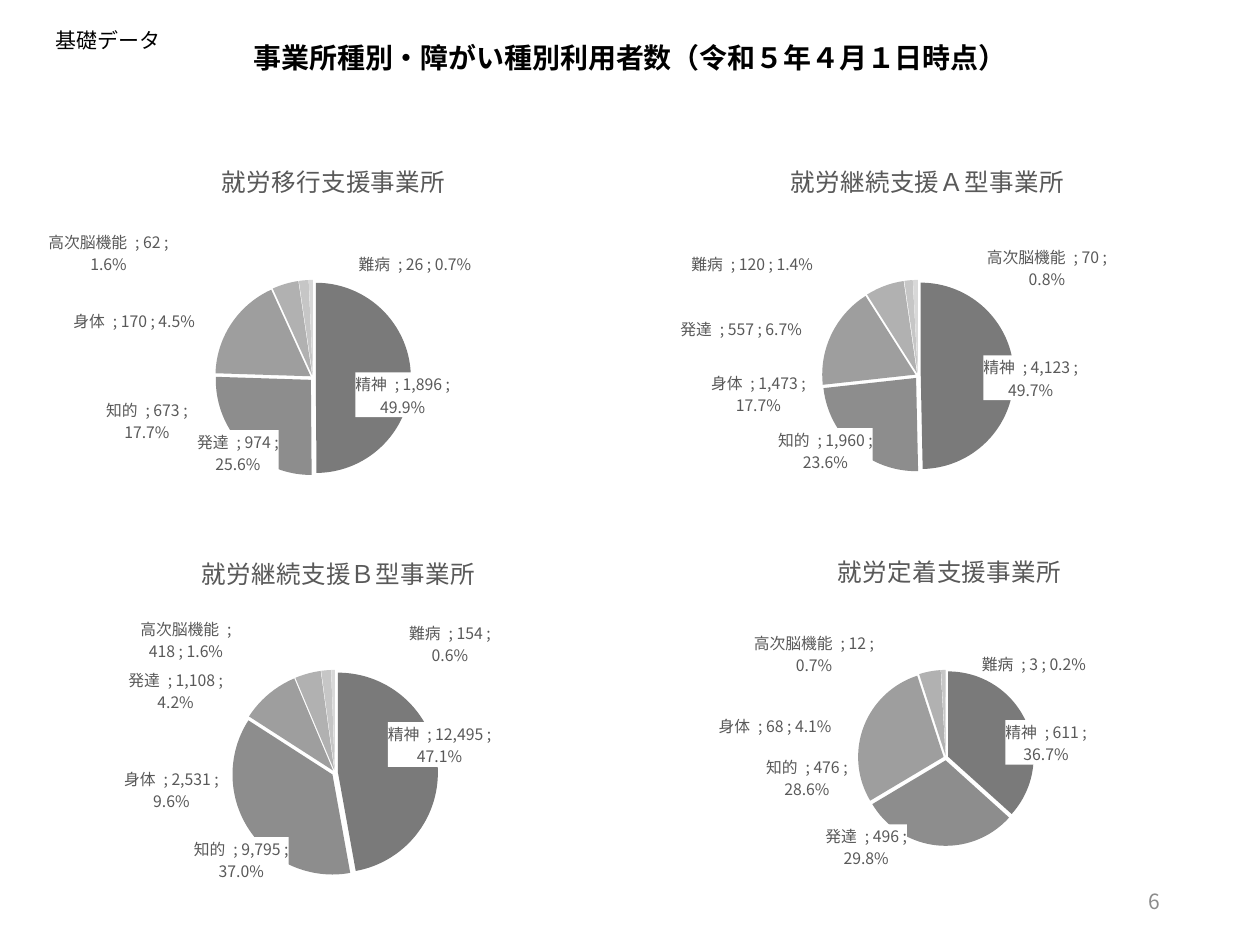
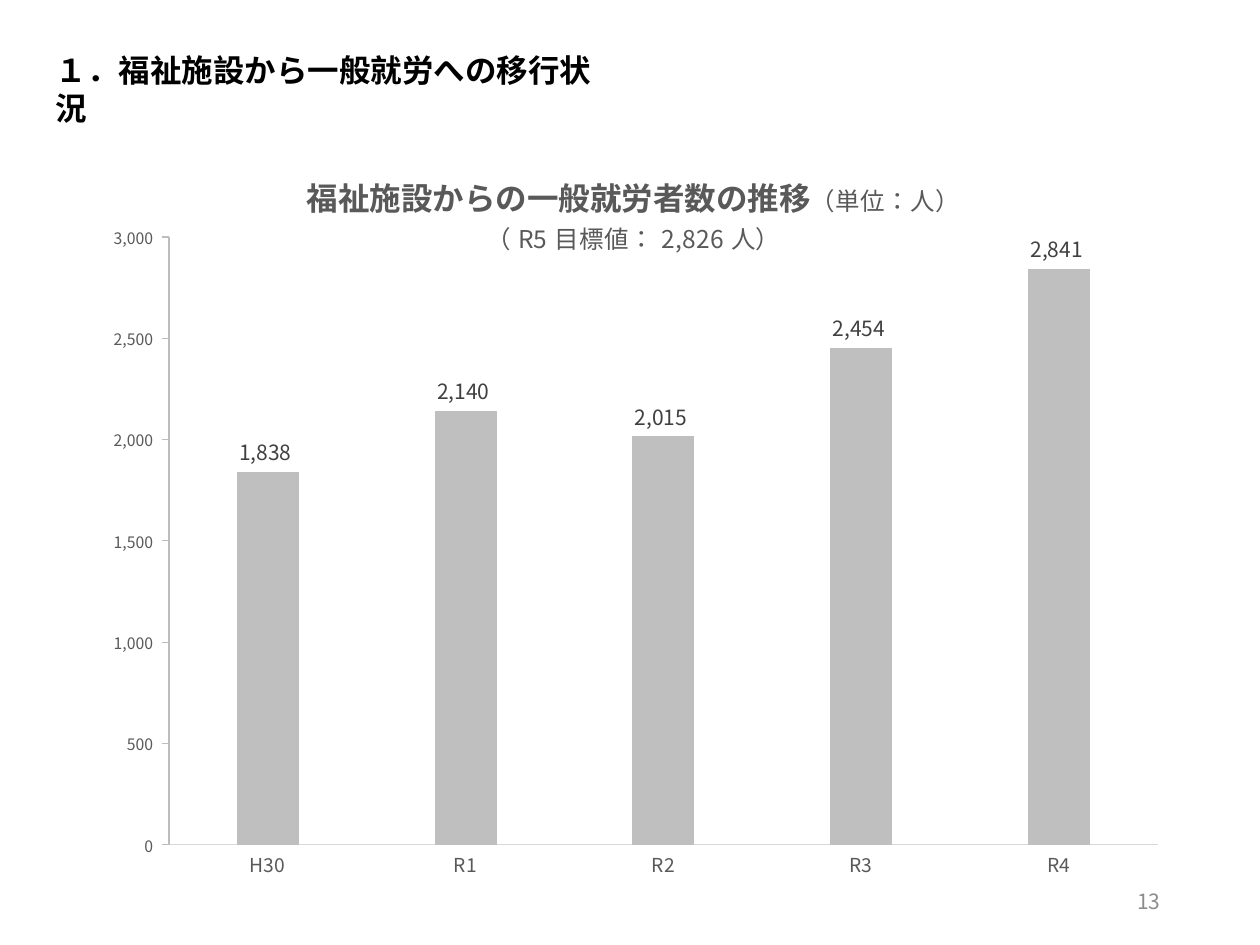
from math import cos, pi, sin

from lxml import etree
from pptx import Presentation
from pptx.chart.data import CategoryChartData
from pptx.dml.color import RGBColor
from pptx.enum.chart import XL_CHART_TYPE, XL_LABEL_POSITION, XL_TICK_MARK
from pptx.enum.text import MSO_ANCHOR, MSO_AUTO_SIZE, PP_ALIGN
from pptx.oxml import parse_xml
from pptx.oxml.ns import nsdecls, qn
from pptx.util import Pt

FONT = "Noto Sans CJK JP"
COLORS = {
    "text": "000000", "page": "8C8C8C", "label": "595959", "value": "404040",
    "white": "FFFFFF", "bar": "BFBFBF", "category_line": "D9D9D9", "value_line": "BDBDBD",
}
SLICES = ["7A7A7A", "8D8D8D", "9E9E9E", "B1B1B1", "C6C6C6", "D8D8D8"]
EMU_PER_PX = 914400 / 126
NUMBER_FORMAT = r"#,##0_);[Red]\(#,##0\)"
EXPLOSION = 3
LABEL_GAP = 7
LINE_HEIGHT = 23

# Content: each slice is (name, users, label centre x, y, label width, lines)
PIES = [
    {"title": "就労移行支援事業所", "title_at": (217, 155), "box": (10, 146, 630, 378),
     "centre": (313, 378), "size": 196, "slices": [
         ("精神", 1896, 401, 395, 92, 2), ("発達", 974, 240, 453, 78, 2),
         ("知的", 673, 149, 420, 78, 2), ("身体", 170, 136, 320, 118, 1),
         ("高次脳機能", 62, 110, 252, 117, 2), ("難病", 26, 415, 264, 108, 1)]},
    {"title": "就労定着支援事業所", "title_at": (833, 545), "box": (630, 537, 630, 378),
     "centre": (946, 758), "size": 176, "slices": [
         ("精神", 611, 1044, 742, 78, 2), ("発達", 496, 868, 847, 78, 2),
         ("知的", 476, 809, 777, 78, 2), ("身体", 68, 777, 725, 109, 1),
         ("高次脳機能", 12, 814, 653, 117, 2), ("難病", 3, 1034, 663, 101, 1)]},
    {"title": "就労継続支援Ａ型事業所", "title_at": (786, 155), "box": (607, 146, 630, 378),
     "centre": (918, 376), "size": 192, "slices": [
         ("精神", 4123, 1029, 378, 92, 2), ("知的", 1960, 827, 451, 92, 2),
         ("身体", 1473, 760, 393, 92, 2), ("発達", 557, 743, 329, 118, 1),
         ("難病", 120, 754, 263, 118, 1), ("高次脳機能", 70, 1047, 267, 117, 2)]},
    {"title": "就労継続支援Ｂ型事業所", "title_at": (197, 547), "box": (43, 537, 604, 378),
     "centre": (335, 773), "size": 206, "slices": [
         ("精神", 12495, 438, 744, 101, 2), ("知的", 9795, 243, 860, 92, 2),
         ("身体", 2531, 173, 789, 92, 2), ("発達", 1108, 177, 690, 92, 2),
         ("高次脳機能", 418, 186, 639, 88, 2), ("難病", 154, 450, 643, 78, 2)]},
]
TREND = {
    "title": [[("福祉施設からの一般就労者数の推移", 18, True), ("（単位：人）", 14, False)],
              [("（R5目標値：2,826人）", 14, False)]],
    "title_at": (303, 167), "box": (84, 137, 1092, 764), "plot": (169, 237, 989, 608),
    "values": {"H30": 1838, "R1": 2140, "R2": 2015, "R3": 2454, "R4": 2841},
}


def px(*lengths):
    return [round(length * EMU_PER_PX) for length in lengths]


def rgb(name):
    return RGBColor.from_string(COLORS[name])


def style_font(font, size, color, bold=False):
    font.name, font.size, font.bold = FONT, Pt(size), bold
    font.color.rgb = rgb(color)


def add_east_asian_font(properties):
    east_asian = etree.Element(qn("a:ea"), typeface=FONT)
    properties.find(qn("a:latin")).addnext(east_asian)


# Text
def write_text(shape, box, text, size, color="text", bold=False,
               align=PP_ALIGN.LEFT, anchor=MSO_ANCHOR.TOP):
    shape.left, shape.top, shape.width, shape.height = px(*box)
    frame = shape.text_frame
    frame.word_wrap, frame.auto_size, frame.vertical_anchor = True, MSO_AUTO_SIZE.NONE, anchor
    frame.text = text
    paragraph = frame.paragraphs[0]
    paragraph.alignment, paragraph.line_spacing = align, Pt(size * 1.2)
    style_font(paragraph.font, size, color, bold)
    add_east_asian_font(paragraph._p.pPr.find(qn("a:defRPr")))


def add_text(slide, box, text, size, **style):
    write_text(slide.shapes.add_textbox(*px(*box)), box, text, size, **style)


def add_slide(presentation, title, title_box, title_size, align, page):
    slide = presentation.slides.add_slide(presentation.slide_layouts[5])
    write_text(slide.shapes.title, title_box, title, title_size, bold=True, align=align)
    add_text(slide, (890, 876, 283, 50), page, 12, color="page",
             align=PP_ALIGN.RIGHT, anchor=MSO_ANCHOR.MIDDLE)
    return slide


# Chart parts
def layout_xml(x, y, size=None):
    target = '<c:layoutTarget val="inner"/>' if size else ""
    modes = '<c:xMode val="edge"/><c:yMode val="edge"/>'
    extent = f'<c:w val="{size[0]:.4f}"/><c:h val="{size[1]:.4f}"/>' if size else ""
    return (f'<c:layout {nsdecls("c")}><c:manualLayout>{target}{modes}'
            f'<c:x val="{x:.4f}"/><c:y val="{y:.4f}"/>{extent}</c:manualLayout></c:layout>')


def replace_layout(element, layout):
    for previous in element.findall(qn("c:layout")):
        element.remove(previous)
    text = element.find(qn("c:tx"))
    if text is None:
        element.insert(0, parse_xml(layout))
    else:
        text.addnext(parse_xml(layout))


def add_chart(slide, kind, box, categories, values, title, title_at, plot):
    data = CategoryChartData(number_format="#,##0")
    data.categories = categories
    data.add_series("Series 1", values)
    chart = slide.shapes.add_chart(kind, *px(*box), data).chart
    chart.has_legend = False
    style_font(chart.font, 10, "text")
    chart.has_title = True
    frame = chart.chart_title.text_frame
    for index, line in enumerate(title):
        paragraph = frame.add_paragraph() if index else frame.paragraphs[0]
        paragraph.alignment = PP_ALIGN.CENTER
        for text, size, bold in line:
            run = paragraph.add_run()
            run.text = text
            style_font(run.font, size, "label", bold)
            add_east_asian_font(run._r.rPr)
    chart.chart_title.include_in_layout = False
    left, top, width, height = box
    replace_layout(chart.chart_title._element,
                   layout_xml((title_at[0] - left) / width, (title_at[1] - top) / height))
    replace_layout(chart._chartSpace.chart.plotArea,
                   layout_xml((plot[0] - left) / width, (plot[1] - top) / height,
                              (plot[2] / width, plot[3] / height)))
    return chart


# Pie charts with freely placed labels
LABEL_STYLE = (
    '<c:numFmt formatCode="0.0%" sourceLinked="0"/>'
    f'<c:spPr><a:solidFill><a:srgbClr val="{COLORS["white"]}"/></a:solidFill>'
    '<a:ln><a:noFill/></a:ln></c:spPr>'
    '<c:txPr><a:bodyPr wrap="square" anchor="ctr"/><a:lstStyle/><a:p><a:pPr>'
    f'<a:defRPr sz="900" b="0"><a:solidFill><a:srgbClr val="{COLORS["label"]}"/></a:solidFill>'
    f'<a:latin typeface="{FONT}"/><a:ea typeface="{FONT}"/></a:defRPr>'
    '</a:pPr><a:endParaRPr lang="ja-JP"/></a:p></c:txPr>'
    '<c:dLblPos val="outEnd"/><c:showLegendKey val="0"/><c:showVal val="1"/>'
    '<c:showCatName val="1"/><c:showSerName val="0"/><c:showPercent val="1"/>'
    '<c:showBubbleSize val="0"/><c:separator> ; </c:separator>'
)


def side(component):
    """Direction in which a label grows away from the edge of the pie."""
    return 0 if abs(component) < sin(pi / 36) else (1 if component > 0 else -1)


def label_offsets(pie):
    """Shift of each label from its automatic place, as shares of the chart."""
    total = sum(users for _, users, *_ in pie["slices"])
    reach = pie["size"] / 2 + LABEL_GAP
    passed = 0
    for _, users, x, y, width, lines in pie["slices"]:
        angle = 2 * pi * (passed + users / 2) / total
        passed += users
        across, down = sin(angle), -cos(angle)
        auto_x = pie["centre"][0] + reach * across + side(across) * width / 2
        auto_y = pie["centre"][1] + reach * down + side(down) * lines * LINE_HEIGHT / 2
        yield (x - auto_x) / pie["box"][2], (y - auto_y) / pie["box"][3]


def add_pie(slide, pie):
    size = pie["size"]
    plot = (pie["centre"][0] - size / 2, pie["centre"][1] - size / 2, size, size)
    names, users = zip(*(entry[:2] for entry in pie["slices"]))
    chart = add_chart(slide, XL_CHART_TYPE.PIE, pie["box"], names, users,
                      [[(pie["title"], 14, False)]], pie["title_at"], plot)
    chart.plots[0].vary_by_categories = True
    series = chart.plots[0].series[0]
    for index, color in enumerate(SLICES):
        fill = series.points[index].format.fill
        fill.solid()
        fill.fore_color.rgb = RGBColor.from_string(color)
    element = series._element
    element.find(qn("c:dPt")).addprevious(
        parse_xml(f'<c:explosion {nsdecls("c")} val="{EXPLOSION}"/>'))
    labels = "".join(
        f'<c:dLbl><c:idx val="{index}"/><c:layout><c:manualLayout>'
        f'<c:x val="{x:.4f}"/><c:y val="{y:.4f}"/></c:manualLayout></c:layout>'
        f'{LABEL_STYLE}</c:dLbl>'
        for index, (x, y) in enumerate(label_offsets(pie)))
    element.find(qn("c:cat")).addprevious(parse_xml(
        f'<c:dLbls {nsdecls("c", "a")}>{labels}{LABEL_STYLE}'
        '<c:showLeaderLines val="0"/></c:dLbls>'))


# Column chart
def style_axis(axis, size, line, tick):
    axis.has_major_gridlines = False
    axis.major_tick_mark, axis.minor_tick_mark = tick, XL_TICK_MARK.NONE
    style_font(axis.tick_labels.font, size, "label")
    axis.format.line.color.rgb = rgb(line)
    axis.format.line.width = Pt(0.75)


def add_trend(slide, trend):
    chart = add_chart(slide, XL_CHART_TYPE.COLUMN_CLUSTERED, trend["box"],
                      list(trend["values"]), list(trend["values"].values()),
                      trend["title"], trend["title_at"], trend["plot"])
    style_axis(chart.category_axis, 11, "category_line", XL_TICK_MARK.NONE)
    axis = chart.value_axis
    style_axis(axis, 9, "value_line", XL_TICK_MARK.OUTSIDE)
    axis.minimum_scale, axis.maximum_scale, axis.major_unit = 0, 3000, 500
    plot = chart.plots[0]
    plot.gap_width, plot.overlap, plot.vary_by_categories = 219, -27, False
    fill = plot.series[0].format.fill
    fill.solid()
    fill.fore_color.rgb = rgb("bar")
    labels = plot.series[0].data_labels
    labels.show_value, labels.position = True, XL_LABEL_POSITION.OUTSIDE_END
    style_font(labels.font, 12, "value")
    for numbers in (labels, axis.tick_labels):
        numbers.number_format, numbers.number_format_is_linked = NUMBER_FORMAT, False


def main():
    presentation = Presentation()
    presentation.slide_width, presentation.slide_height = px(1260, 945)

    # Users by type of office and disability
    slide = add_slide(presentation, "事業所種別・障がい種別利用者数（令和５年４月１日時点）",
                      (170, 34, 921, 47), 16, PP_ALIGN.CENTER, "6")
    add_text(slide, (43, 21, 178, 38), "基礎データ", 12)
    for pie in PIES:
        add_pie(slide, pie)

    # Moves into regular employment
    slide = add_slide(presentation, "１．福祉施設から一般就労への移行状況",
                      (43, 45, 577, 50), 18, PP_ALIGN.LEFT, "13")
    add_trend(slide, TREND)
    presentation.save("out.pptx")


if __name__ == "__main__":
    main()
